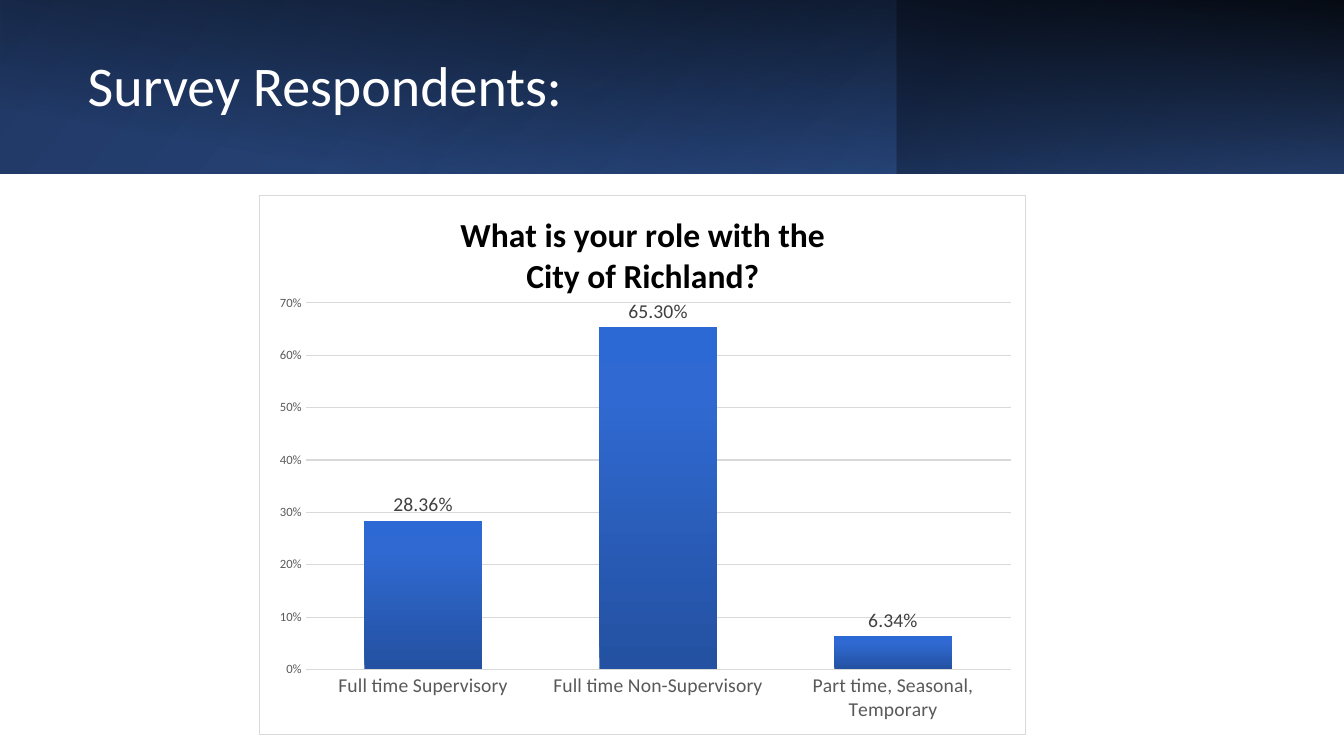
from pptx import Presentation
from pptx.chart.data import CategoryChartData
from pptx.dml.color import RGBColor
from pptx.enum.chart import XL_CHART_TYPE as CT, XL_LABEL_POSITION as LP, XL_TICK_MARK as TM
from pptx.enum.shapes import MSO_SHAPE as SHAPE
from pptx.enum.text import MSO_ANCHOR as ANCHOR, MSO_AUTO_SIZE as FIT, PP_ALIGN as ALIGN
from pptx.oxml import parse_xml
from pptx.oxml.ns import nsdecls, qn
from pptx.util import Inches, Pt

WHITE = RGBColor(0xFF, 0xFF, 0xFF)
BLACK = RGBColor(0x00, 0x00, 0x00)
NAVY = RGBColor(0x20, 0x38, 0x64)
BLUE = RGBColor(0x2F, 0x55, 0x97)
ACCENT = RGBColor(0x44, 0x72, 0xC4)
BAR_DARK = RGBColor(0x24, 0x51, 0xA1)
BAR_MID = RGBColor(0x2F, 0x69, 0xD1)
BAR_LIGHT = RGBColor(0x2C, 0x69, 0xD5)
LABEL = RGBColor(0x40, 0x40, 0x40)
GRAY = RGBColor(0x59, 0x59, 0x59)
GRID = RGBColor(0xD9, 0xD9, 0xD9)

WIDTH, BAND = 13.33, 1.72


def style_font(font, size, color, bold=False):
    font.name = "Calibri"
    font.size = Pt(size)
    font.bold = bold
    font.color.rgb = color


def write(p, text, **style):
    r = p.add_run()
    r.text = text
    style_font(r.font, **style)


def set_gradient(fill, sp_pr, stops, angle):
    fill.gradient()
    gs = "".join(
        f'<a:gs pos="{pos * 1000}"><a:srgbClr val="{color}">'
        f'<a:alpha val="{alpha * 1000}"/></a:srgbClr></a:gs>'
        for pos, color, alpha in stops)
    old = sp_pr.find(qn("a:gradFill"))
    sp_pr.replace(old, parse_xml(
        f'<a:gradFill {nsdecls("a")} rotWithShape="1"><a:gsLst>{gs}</a:gsLst>'
        f'<a:lin ang="{angle * 60000}" scaled="0"/></a:gradFill>'))


class SlideBuilder:
    def __init__(self, prs):
        self.slide = prs.slides.add_slide(prs.slide_layouts[5])
        self.shapes = self.slide.shapes
        fill = self.slide.background.fill
        fill.solid()
        fill.fore_color.rgb = WHITE

    def gradient_rect(self, box, stops, angle, rotation=0, flip=False):
        sp = self.shapes.add_shape(SHAPE.RECTANGLE, *map(Inches, box))
        sp.shadow.inherit = False
        sp.line.fill.background()
        sp.rotation = rotation
        sp_pr = sp._element.spPr
        if flip:
            sp_pr.find(qn("a:xfrm")).set("flipH", "1")
        set_gradient(sp.fill, sp_pr, stops, angle)

    def title(self, text, box):
        sp = self.shapes.title
        sp.left, sp.top, sp.width, sp.height = map(Inches, box)
        self.shapes._spTree.append(sp._element)
        tf = sp.text_frame
        tf.word_wrap = True
        tf.auto_size = FIT.NONE
        tf.vertical_anchor = ANCHOR.MIDDLE
        p = tf.paragraphs[0]
        p.alignment = ALIGN.LEFT
        p.line_spacing = 0.9
        write(p, text, size=40, color=WHITE)

    def column_chart(self, box, title_lines, values, plot_box):
        data = CategoryChartData(number_format="0.00%")
        data.categories = list(values)
        data.add_series("Series 1", list(values.values()))
        chart = self.shapes.add_chart(CT.COLUMN_CLUSTERED, *map(Inches, box), data).chart
        style_font(chart.font, 10, BLACK)
        chart.has_legend = False
        self.chart_title(chart, title_lines)
        self.chart_frame(chart, plot_box)
        self.chart_axes(chart)
        self.chart_columns(chart.plots[0])

    def chart_title(self, chart, lines):
        chart.has_title = True
        tf = chart.chart_title.text_frame
        for i, line in enumerate(lines):
            p = tf.add_paragraph() if i else tf.paragraphs[0]
            write(p, line, size=24, color=BLACK, bold=True)

    def chart_frame(self, chart, plot_box):
        root = chart._chartSpace
        root.find(qn("c:chart")).addnext(parse_xml(
            f'<c:spPr {nsdecls("c", "a")}><a:solidFill><a:srgbClr val="{WHITE}"/></a:solidFill>'
            f'<a:ln w="{Pt(0.75)}"><a:solidFill><a:srgbClr val="{GRID}"/></a:solidFill></a:ln></c:spPr>'))
        area = root.find(".//" + qn("c:plotArea"))
        for old in area.findall(qn("c:layout")):
            area.remove(old)
        sides = "".join(f'<c:{k} val="{v}"/>' for k, v in zip("xywh", plot_box))
        area.insert(0, parse_xml(
            f'<c:layout {nsdecls("c")}><c:manualLayout><c:layoutTarget val="inner"/>'
            f'<c:xMode val="edge"/><c:yMode val="edge"/>{sides}</c:manualLayout></c:layout>'))

    def chart_axes(self, chart):
        cat, val = chart.category_axis, chart.value_axis
        for axis, size in ((cat, 14), (val, 9)):
            axis.major_tick_mark = axis.minor_tick_mark = TM.NONE
            style_font(axis.tick_labels.font, size, GRAY)
        cat.format.line.color.rgb = GRID
        cat.format.line.width = Pt(1)
        val.format.line.fill.background()
        val.minimum_scale, val.maximum_scale, val.major_unit = 0, 0.7, 0.1
        val.tick_labels.number_format = "0%"
        val.tick_labels.number_format_is_linked = False
        val.has_major_gridlines = True
        grid = val.major_gridlines.format.line
        grid.color.rgb = GRID
        grid.width = Pt(0.75)

    def chart_columns(self, plot):
        plot.gap_width, plot.overlap = 100, -24
        plot.vary_by_categories = False
        series = plot.series[0]
        fill = series.format.fill
        set_gradient(fill, series._element.find(qn("c:spPr")),
                     [(0, BAR_DARK, 100), (80, BAR_MID, 100), (100, BAR_LIGHT, 100)], 270)
        labels = series.data_labels
        labels.show_value = True
        labels.position = LP.OUTSIDE_END
        labels.number_format = "0.00%"
        labels.number_format_is_linked = False
        style_font(labels.font, 14, LABEL)


def main():
    prs = Presentation()
    prs.slide_width, prs.slide_height = Inches(WIDTH), Inches(7.5)
    s = SlideBuilder(prs)
    s.gradient_rect((0, 0, WIDTH, BAND), [(0, NAVY, 100), (100, BLUE, 100)], 140, flip=True)
    s.gradient_rect((8.89, 0, 4.44, BAND), [(19, NAVY, 68), (100, ACCENT, 79)], 320,
                    rotation=180, flip=True)
    offset = (WIDTH - BAND) / 2
    s.gradient_rect((offset, -offset, BAND, WIDTH), [(16, BLACK, 0), (99, BLACK, 87)], 190,
                    rotation=90)
    s.gradient_rect((4.18, 0, 4.71, BAND), [(0, ACCENT, 17), (74, NAVY, 0)], 240)
    s.title("Survey Respondents:", (0.77, 0.39, 7.76, 0.98))
    s.column_chart(
        (2.57, 1.93, 7.61, 5.36),
        ("What is your role with the", "City of Richland?"),
        {"Full time Supervisory": 0.2836,
         "Full time Non-Supervisory": 0.653,
         "Part time, Seasonal, Temporary": 0.0634},
        (0.06, 0.2, 0.92, 0.68))
    prs.save("out.pptx")


if __name__ == "__main__":
    main()
